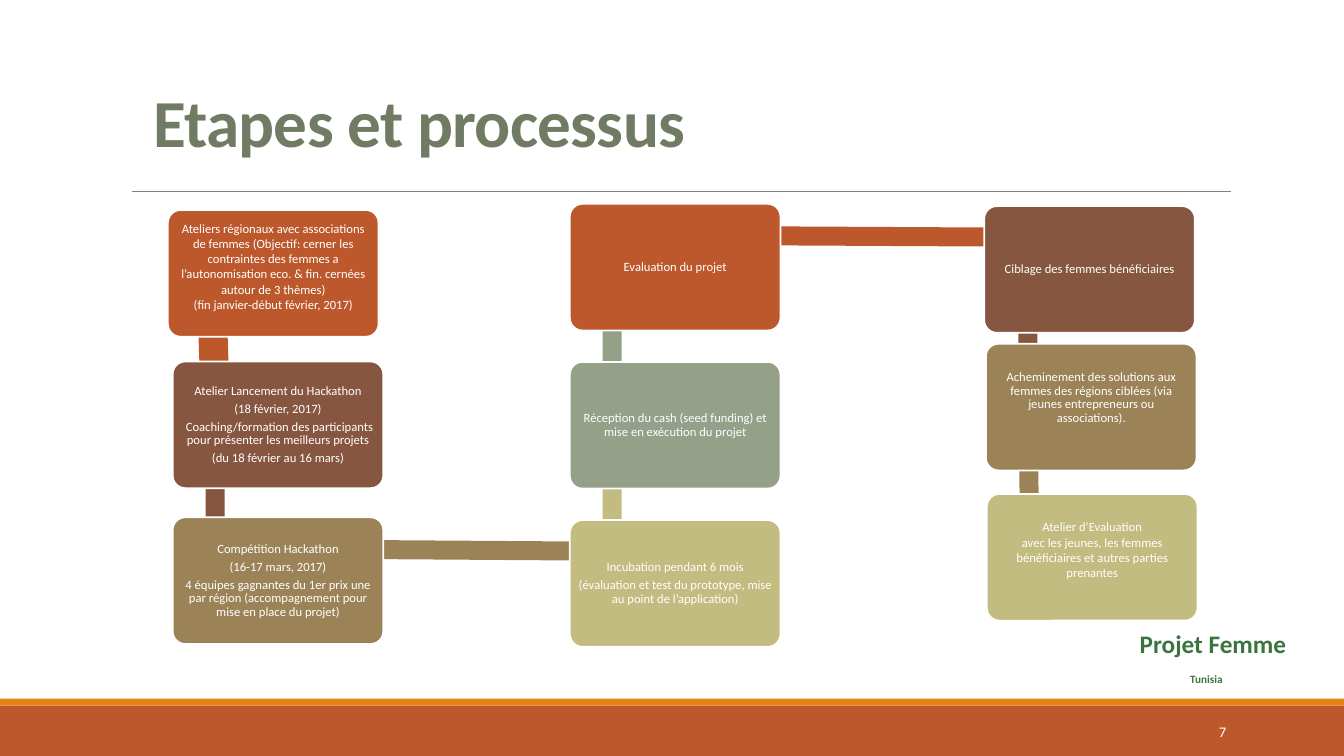
"""Build the slide on project steps as a snake of linked boxes."""
import math

import pptx
import pptx.dml.color
import pptx.enum.shapes
import pptx.enum.text
import pptx.oxml
import pptx.util

Pt = pptx.util.Pt
Align = pptx.enum.text.PP_ALIGN
Anchor = pptx.enum.text.MSO_ANCHOR
Shape = pptx.enum.shapes.MSO_SHAPE

HUES = {
    "rust": "BD582C", "orange": "E48312", "brown": "865640",
    "tan": "9B8357", "sand": "C2BC80", "sage": "94A088",
    "olive": "6F7B63", "green": "3C743F", "gray": "808080", "white": "FFFFFF",
}
WIDE, HIGH = 150.5, 90.5

STEPS = [
    (119.9, 150, "rust", 1, 10, [
        "Ateliers régionaux avec associations de femmes (Objectif: cerner les "
        "contraintes des femmes a l’autonomisation eco. & fin. cernées autour de 3 thèmes)",
        "(fin janvier-début février, 2017)"]),
    (123.3, 258.2, "brown", 0.9, 0, [
        "Atelier Lancement du Hackathon",
        "(18 février, 2017)",
        " Coaching/formation des participants pour présenter les meilleurs projets",
        "(du 18 février au 16 mars)"]),
    (123.3, 369.5, "tan", 0.9, 0, [
        "Compétition Hackathon",
        "(16-17 mars, 2017)",
        "4 équipes gagnantes du 1er prix une par région "
        "(accompagnement pour mise en place du projet)"]),
    (407, 371.5, "sand", 0.9, 0, [
        "Incubation pendant 6 mois",
        "(évaluation et test du prototype, mise au point de l’application)"]),
    (407, 258.5, "sage", 0.9, 0, [
        "Réception du cash (seed funding) et mise en exécution du projet"]),
    (407, 145.6, "rust", 0.9, 0, ["Evaluation du projet"]),
    (703, 147.2, "brown", 0.9, 0, ["Ciblage des femmes bénéficiaires"]),
    (704.2, 245.5, "tan", 0.9, 13, [
        "Acheminement des solutions aux femmes des régions ciblées "
        "(via jeunes entrepreneurs ou associations)."]),
    (704.9, 352.8, "sand", 1, 11, [
        "Atelier d’Evaluation",
        "avec les jeunes, les femmes bénéficiaires et autres parties prenantes"]),
]


class Deck:
    """Hold the style and the current slide."""

    def __init__(self):
        """Open a wide deck with one titled slide."""
        self.file = pptx.Presentation()
        self.file.slide_width, self.file.slide_height = Pt(960), Pt(540)
        self.slide = self.file.slides.add_slide(self.file.slide_layouts[5])

    def hue(self, name):
        """Return a named colour."""
        return pptx.dml.color.RGBColor.from_string(HUES[name])

    def style(self, para, size, hue, bold=False):
        """Format the runs of a paragraph."""
        for run in para.runs:
            font = run.font
            font.name, font.size, font.bold = "Calibri", Pt(size), bold
            font.color.rgb = self.hue(hue)

    def shape(self, kind, x, y, w, h, hue):
        """Add a flat filled shape."""
        item = self.slide.shapes.add_shape(kind, Pt(x), Pt(y), Pt(w), Pt(h))
        item.shadow.inherit = False
        item.fill.solid()
        item.fill.fore_color.rgb = self.hue(hue)
        item.line.fill.background()
        return item

    def rule(self, x, y, end):
        """Add a thin level line."""
        line = self.slide.shapes.add_connector(
            pptx.enum.shapes.MSO_CONNECTOR.STRAIGHT, Pt(x), Pt(y), Pt(end), Pt(y))
        line.line.color.rgb = self.hue("gray")
        line.line.width = Pt(0.5)
        line._element.spPr.append(pptx.oxml.parse_xml(
            '<a:effectLst xmlns:a="http://schemas.openxmlformats.org/drawingml/2006/main"/>'))

    def title(self, text):
        """Place and fill the title."""
        item = self.slide.shapes.title
        item.left, item.top, item.width, item.height = Pt(102.2), Pt(77), Pt(756), Pt(41.8)
        frame = item.text_frame
        frame.text = text
        frame.auto_size = pptx.enum.text.MSO_AUTO_SIZE.NONE
        frame.vertical_anchor = Anchor.BOTTOM
        para = frame.paragraphs[0]
        para.alignment, para.line_spacing = Align.LEFT, 0.85
        self.style(para, 48, "olive", True)
        para.runs[0].font._element.set("spc", "-50")

    def label(self, x, y, w, h, text):
        """Add a text box and return its frame."""
        item = self.slide.shapes.add_textbox(Pt(x), Pt(y), Pt(w), Pt(h))
        frame = item.text_frame
        frame.word_wrap = True
        frame.text = text
        return frame

    def link(self, start, end, thick):
        """Add a bar that runs between two steps."""
        dx, dy = end[0] - start[0], end[1] - start[1]
        span = math.hypot(dx, dy)
        mid = (start[0] + end[0]) / 2 + 30.3
        top = (start[1] + end[1]) / 2 + 15.5
        bar = self.shape(Shape.RECTANGLE, mid - span / 2, top, span, thick, start[2])
        bar.rotation = math.degrees(math.atan2(dy, dx))

    def step(self, x, y, hue, pitch, lift, lines):
        """Add a round box with its lines of text."""
        box = self.shape(Shape.ROUNDED_RECTANGLE, x, y, WIDE, HIGH, hue)
        box.adjustments[0] = 0.1
        box.line.color.rgb = self.hue("white")
        box.line.width = Pt(1.25)
        frame = box.text_frame
        frame.word_wrap = True
        frame.vertical_anchor = Anchor.MIDDLE
        frame.margin_left = frame.margin_right = frame.margin_top = Pt(3)
        frame.margin_bottom = Pt(3 + lift)
        frame.text = "\n".join(lines)
        for para in frame.paragraphs:
            para.alignment, para.line_spacing = Align.CENTER, pitch
            para.space_after = Pt(0 if pitch == 1 else 3.15)
            self.style(para, 9, "white")


def main():
    """Draw the slide and save it."""
    deck = Deck()
    deck.shape(Shape.RECTANGLE, 0, 504, 960, 36, "rust")
    deck.shape(Shape.RECTANGLE, 0, 499, 960, 5, "orange")
    deck.rule(94.3, 136.8, 879)
    deck.title("Etapes et processus")
    for rank, (start, end) in enumerate(zip(STEPS, STEPS[1:])):
        deck.link(start, end, 13.6 if rank else 20.8)
    for step in STEPS:
        deck.step(*step)

    frame = deck.label(780, 508.3, 103, 29, "7")
    frame.vertical_anchor = Anchor.MIDDLE
    frame.paragraphs[0].alignment = Align.RIGHT
    deck.style(frame.paragraphs[0], 10.5, "white")

    name, land = deck.label(807, 445, 140, 51, "Projet Femme\nTunisia").paragraphs
    deck.style(name, 18, "green", True)
    deck.style(land, 8, "green", True)
    land.space_before = Pt(10)
    land._p.get_or_add_pPr().set("marL", str(Pt(36)))
    deck.file.save("out.pptx")


if __name__ == "__main__":
    main()
